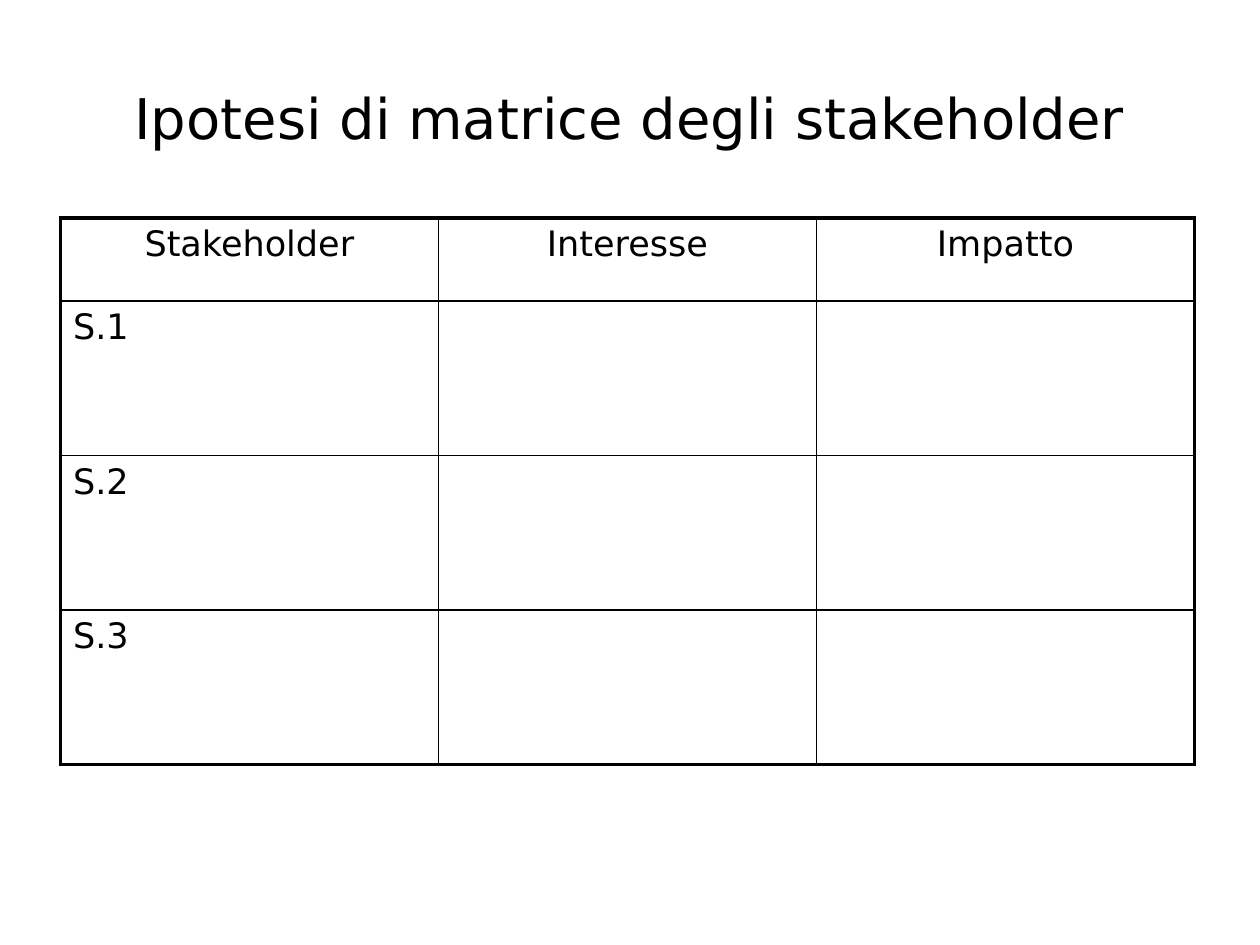
from lxml.etree import SubElement
from pptx import Presentation
from pptx.dml.color import RGBColor
from pptx.enum.text import MSO_ANCHOR, MSO_AUTO_SIZE, PP_ALIGN
from pptx.oxml import parse_xml
from pptx.oxml.ns import nsdecls, qn
from pptx.util import Inches, Pt

COLORS = {"ink": "000000"}
FONT = "DejaVu Sans"
OUTER, INNER = 2.25, 1
HEADERS = ["Stakeholder", "Interesse", "Impatto"]
STAKEHOLDERS = ["S.1", "S.2", "S.3"]
HEADER_HEIGHT = 0.66


def style_para(para, size, align):
    para.alignment = align
    para.font.name = FONT
    para.font.size = Pt(size)
    para.font.color.rgb = RGBColor.from_string(COLORS["ink"])


def set_borders(cell, widths):
    properties = cell._tc.get_or_add_tcPr()
    for index, (side, width) in enumerate(widths.items()):
        line = parse_xml(f'<a:ln{side} {nsdecls("a")} w="{Pt(width)}"/>')
        fill = SubElement(line, qn("a:solidFill"))
        SubElement(fill, qn("a:srgbClr"), val=COLORS["ink"])
        properties.insert(index, line)


def add_title(page, text, left, top, width, height):
    title = page.shapes.title
    title.left, title.top = Inches(left), Inches(top)
    title.width, title.height = Inches(width), Inches(height)
    frame = title.text_frame
    frame.text = text
    frame.word_wrap = True
    frame.auto_size = MSO_AUTO_SIZE.NONE
    frame.vertical_anchor = MSO_ANCHOR.TOP
    frame.margin_left = frame.margin_right = frame.margin_bottom = 0
    frame.margin_top = Inches(0.28)
    style_para(frame.paragraphs[0], 32, PP_ALIGN.CENTER)


def add_matrix(page, left, top, width, height):
    rows = [HEADERS] + [[name, "", ""] for name in STAKEHOLDERS]
    last_row, last_column = len(rows) - 1, len(HEADERS) - 1
    table = page.shapes.add_table(
        len(rows), len(HEADERS), Inches(left), Inches(top), Inches(width), Inches(height)
    ).table
    table.first_row = table.horz_banding = False
    for column in table.columns:
        column.width = Inches(width / len(HEADERS))
    for r, texts in enumerate(rows):
        table.rows[r].height = Inches(
            (height - HEADER_HEIGHT) / len(STAKEHOLDERS) if r else HEADER_HEIGHT
        )
        for c, text in enumerate(texts):
            cell = table.cell(r, c)
            cell.fill.background()
            cell.margin_left = Inches(0.1 if r else 0)
            cell.margin_right = cell.margin_bottom = 0
            cell.margin_top = Inches(0.05)
            cell.text = text
            style_para(cell.text_frame.paragraphs[0], 20,
                       PP_ALIGN.LEFT if r else PP_ALIGN.CENTER)
            set_borders(cell, {
                "L": INNER if c else OUTER,
                "R": OUTER if c == last_column else INNER,
                "T": INNER if r else OUTER,
                "B": OUTER if r == last_row else INNER,
            })


def main():
    deck = Presentation()
    deck.slide_width, deck.slide_height = Inches(10), Inches(7.5)
    page = deck.slides.add_slide(deck.slide_layouts[5])
    add_title(page, "Ipotesi di matrice degli stakeholder", 0.63, 0.38, 8.74, 1.09)
    add_matrix(page, 0.48, 1.73, 9, 4.34)
    deck.save("out.pptx")


if __name__ == "__main__":
    main()
